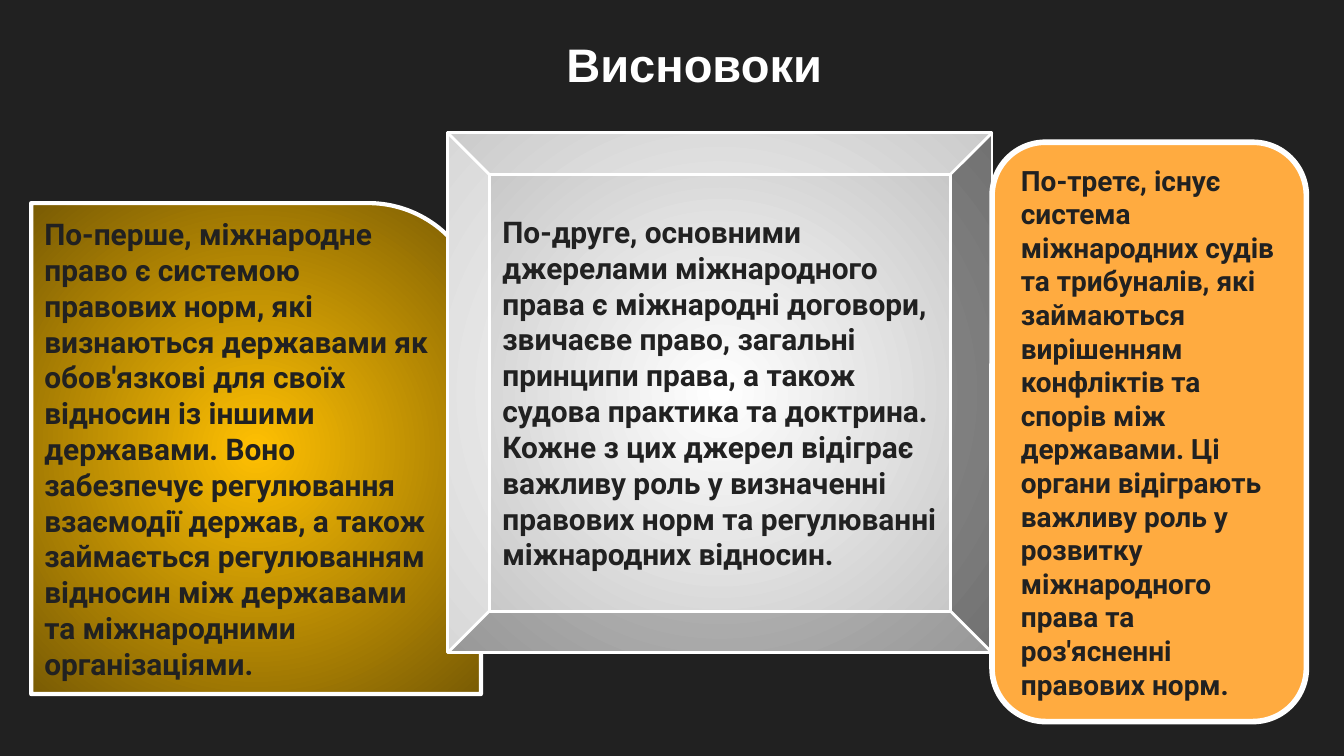
from dataclasses import dataclass
from typing import Optional

from lxml import etree
from pptx import Presentation
from pptx import util as u
from pptx.dml.color import RGBColor
from pptx.enum import shapes, text
from pptx.oxml import ns

DARK = RGBColor(0x21, 0x21, 0x21)
WHITE = RGBColor(0xFF, 0xFF, 0xFF)
GOLD = RGBColor(0xFF, 0xC0, 0x02)
BROWN = RGBColor(0x79, 0x5B, 0x04)
SILVER = RGBColor(0xBE, 0xBE, 0xBE)
ORANGE = RGBColor(0xFF, 0xAB, 0x40)
INSET = u.Cm(0.25)


@dataclass(frozen=True)
class Card:
    kind: shapes.MSO_SHAPE
    adjustment: float
    left: float
    top: float
    width: float
    height: float
    fill: RGBColor
    edge: Optional[RGBColor]
    line: float
    size: float
    words: str


CARDS = [
    Card(shapes.MSO_SHAPE.ROUND_1_RECTANGLE, 0.25, 0.59, 3.84, 8.5, 9.28,
         GOLD, BROWN, 2.25, 16,
         "По-перше, міжнародне право є системою правових норм, які визнаються "
         "державами як обов'язкові для своїх відносин із іншими державами. "
         "Воно забезпечує регулювання взаємодії держав, а також займається "
         "регулюванням відносин між державами та міжнародними організаціями."),
    Card(shapes.MSO_SHAPE.BEVEL, 0.08, 8.46, 2.51, 10.29, 9.83,
         WHITE, SILVER, 1.5, 16,
         "По-друге, основними джерелами міжнародного права є міжнародні "
         "договори, звичаєве право, загальні принципи права, а також судова "
         "практика та доктрина. Кожне з цих джерел відіграє важливу роль у "
         "визначенні правових норм та регулюванні міжнародних відносин."),
    Card(shapes.MSO_SHAPE.ROUNDED_RECTANGLE, 0.17, 18.75, 2.69, 5.94, 10.95,
         ORANGE, None, 3, 15,
         "По-третє, існує система міжнародних судів та трибуналів, які "
         "займаються вирішенням конфліктів та спорів між державами. Ці органи "
         "відіграють важливу роль у розвитку міжнародного права та "
         "роз'ясненні правових норм."),
]


def write(sp, words: str, font: str, size: float, color: RGBColor,
          align: text.PP_ALIGN) -> None:
    tf = sp.text_frame
    tf.word_wrap = True
    tf.auto_size = text.MSO_AUTO_SIZE.NONE
    tf.vertical_anchor = text.MSO_ANCHOR.MIDDLE
    tf.margin_left = tf.margin_right = tf.margin_top = tf.margin_bottom = INSET
    tf.text = words
    p = tf.paragraphs[0]
    p.alignment = align
    p.font.name = font
    p.font.size = u.Pt(size)
    p.font.bold = True
    p.font.color.rgb = color


def fill_radial(sp, center: RGBColor, edge: RGBColor) -> None:
    sp.fill.gradient()
    for stop, color, position in zip(sp.fill.gradient_stops, (center, edge), (0, 1)):
        stop.color.rgb = color
        stop.position = position
    gradient = sp._element.spPr.find(ns.qn("a:gradFill"))
    linear = gradient.find(ns.qn("a:lin"))
    radial = etree.Element(ns.qn("a:path"), path="circle")
    etree.SubElement(radial, ns.qn("a:fillToRect"),
                     {side: "50000" for side in "ltrb"})
    gradient.replace(linear, radial)


def draw_card(s, card: Card) -> None:
    sp = s.shapes.add_shape(card.kind, u.Cm(card.left), u.Cm(card.top),
                            u.Cm(card.width), u.Cm(card.height))
    sp.shadow.inherit = False
    sp.adjustments[0] = card.adjustment
    if card.edge is None:
        sp.fill.solid()
        sp.fill.fore_color.rgb = card.fill
    else:
        fill_radial(sp, card.fill, card.edge)
    sp.line.color.rgb = WHITE
    sp.line.width = u.Pt(card.line)
    write(sp, card.words, "Roboto", card.size, DARK, text.PP_ALIGN.LEFT)


def main() -> None:
    prs = Presentation()
    prs.slide_width, prs.slide_height = u.Cm(25.4), u.Cm(14.29)
    s = prs.slides.add_slide(prs.slide_layouts.get_by_name("Title Only"))
    s.background.fill.solid()
    s.background.fill.fore_color.rgb = DARK

    title = s.shapes.title
    title.left, title.top = u.Cm(8.74), u.Cm(0.41)
    title.width, title.height = u.Cm(8.76), u.Cm(1.6)
    write(title, "Висновоки", "Arial", 25.2, WHITE, text.PP_ALIGN.CENTER)

    for card in CARDS:
        draw_card(s, card)
    prs.save("out.pptx")


if __name__ == "__main__":
    main()
